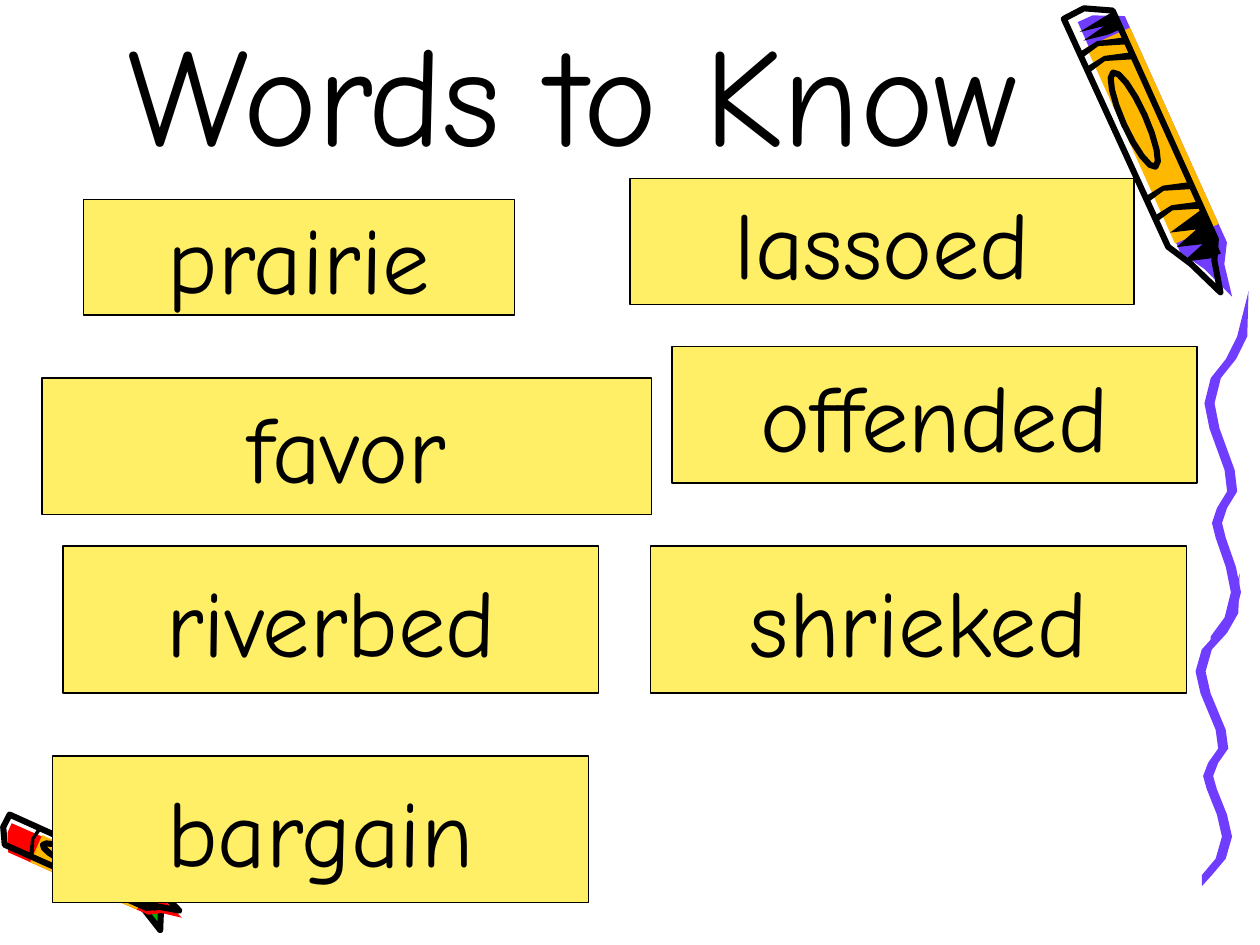
from math import cos, pi, radians, sin

from pptx import Presentation
from pptx.dml.color import RGBColor
from pptx.enum.shapes import MSO_SHAPE as Shape
from pptx.enum.text import MSO_ANCHOR as Anchor, MSO_AUTO_SIZE as Fit, PP_ALIGN as Align
from pptx.util import Cm, Pt

BLACK = RGBColor(0x00, 0x00, 0x00)
YELLOW = RGBColor(0xFF, 0xEF, 0x66)
ORANGE = RGBColor(0xFF, 0xB8, 0x00)
PURPLE = RGBColor(0x70, 0x3D, 0xFF)
RED = RGBColor(0xFF, 0x00, 0x00)
GREEN = RGBColor(0x00, 0xB2, 0x00)

FONT = "Comic Neue"
INK = 3.5  # crayon outline, in points

# A crayon is described as (along, across): along runs from butt to tip.
WAX = [(-0.09, 0.1), (-0.09, 0.23), (0.02, 0.46), (1.99, 0.46),
       (2.14, 0.37), (2.4, 0.32), (2.11, 0.21), (1.91, 0.09)]
EDGE = [(-0.16, 0.01), (-0.17, 0.19), (-0.06, 0.39), (1.93, 0.39),
        (2.08, 0.31), (2.33, 0.25), (2.03, 0.13), (1.83, 0.02)]
BAND = [(0, 0.03), (-0.03, 0.17), (0.05, 0.38),
        (-0.01, 0.38), (-0.07, 0.18), (-0.05, 0.03)]
PAPER_END, PAPER_LOW, PAPER_HIGH = 1.83, 0.08, 0.46
NIB_SHADE = (1.67, 2.05, 3)  # start, stop, teeth
BUTT_SHADE = (-0.05, 0.1, 2)

# Middle of the wavy trail, from its top end down
TRAIL = [(0.35, 0), (0.3, 0.36), (0.21, 0.54), (0.09, 0.69),
         (0.04, 0.89), (0.08, 1.09), (0.2, 1.42), (0.22, 1.59),
         (0.14, 1.72), (0.1, 1.84), (0.13, 1.96), (0.21, 2.19),
         (0.25, 2.39), (0.2, 2.59), (0.09, 2.74), (0.05, 2.84)]
TRAIL_HALF = 0.04  # half the thickness of the trail

# word, left, top, width, height in cm
WORDS = [
    ("prairie", 1.69, 4.02, 8.68, 2.33),
    ("favor", 0.85, 7.62, 12.28, 2.75),
    ("riverbed", 1.27, 11.01, 10.8, 2.96),
    ("lassoed", 12.7, 3.6, 10.16, 2.54),
    ("offended", 13.55, 6.99, 10.58, 2.75),
    ("bargain", 1.06, 15.24, 10.8, 2.96),
    ("shrieked", 13.12, 11.01, 10.8, 2.96),
]


def write(shape, text, size, anchor=Anchor.MIDDLE, wrap=False):
    frame = shape.text_frame
    frame.auto_size = Fit.NONE
    frame.word_wrap = wrap
    frame.vertical_anchor = anchor
    para = frame.paragraphs[0]
    para.alignment = Align.CENTER
    para.line_spacing = 1.0
    para.space_before = Pt(0)
    run = para.add_run()
    run.text = text
    run.font.name = FONT
    run.font.size = Pt(size)
    run.font.color.rgb = BLACK


def paint(shape, fill=None, ink=0):
    """Fill the shape, or leave it open, and give it a black line if ink > 0."""
    shape.shadow.inherit = False
    if fill is None:
        shape.fill.background()
    else:
        shape.fill.solid()
        shape.fill.fore_color.rgb = fill
    if ink:
        shape.line.color.rgb = BLACK
        shape.line.width = Pt(ink)
    else:
        shape.line.fill.background()


def draw(slide, spots, fill=None, ink=0):
    """Draw a closed outline through spots given in cm."""
    spots = [(Cm(x), Cm(y)) for x, y in spots]
    pen = slide.shapes.build_freeform(*spots[0])
    pen.add_line_segments(spots[1:], close=True)
    paint(pen.convert_to_shape(), fill, ink)


def zigzag(start, stop, teeth):
    """Shading that hangs from the barrel's far edge in pointed teeth."""
    step = (stop - start) / teeth
    spots = [(start, 0.38)]
    for i in range(teeth):
        spots += [(start + (i + 0.5) * step, 0.08),
                  (start + (i + 1) * step, 0.28)]
    return spots + [(stop, 0.38)]


def ellipse(along, across, long, short, count=16):
    turns = [2 * pi * i / count for i in range(count)]
    return [(along + long * cos(t), across + short * sin(t)) for t in turns]


def add_crayon(slide, left, top, size, angle, side, wax, cap, bands, shades):
    """Draw a crayon from its butt corner; side 1 or -1 mirrors it.

    size is cm per crayon unit, cap is where the paper wrap starts.
    """
    dx, dy = cos(radians(angle)), sin(radians(angle))

    def part(spots, **look):
        turned = [(left + size * (u * dx + side * v * dy),
                   top + size * (u * dy - side * v * dx)) for u, v in spots]
        draw(slide, turned, **look)

    part(WAX, fill=wax)
    part([(cap, PAPER_LOW), (PAPER_END, PAPER_LOW),
          (PAPER_END, PAPER_HIGH), (cap, PAPER_HIGH)], fill=ORANGE)
    for shade in shades:
        part(zigzag(*shade), fill=BLACK)
    for start in bands:
        part([(start + u, v) for u, v in BAND], fill=BLACK)
    part(ellipse(0.8, 0.19, 0.41, 0.09), ink=INK)
    part(EDGE, ink=INK)


def add_trail(slide, left, top, wide, tall):
    """Widen the middle line into a ribbon with pointed ends."""
    inner = TRAIL[1:-1]
    near = [(x - TRAIL_HALF, y) for x, y in inner]
    far = [(x + TRAIL_HALF, y) for x, y in reversed(inner)]
    ring = [TRAIL[0], *near, TRAIL[-1], *far]
    draw(slide, [(left + wide * x, top + tall * y) for x, y in ring], fill=PURPLE)


def add_title(slide, text):
    title = slide.shapes.title
    title.left, title.top = Cm(0.85), Cm(0)
    title.width, title.height = Cm(21.38), Cm(10.16)
    write(title, text, 80, anchor=Anchor.TOP, wrap=True)


def add_card(slide, word, *box):
    card = slide.shapes.add_shape(Shape.RECTANGLE, *map(Cm, box))
    paint(card, YELLOW, ink=0.75)
    write(card, word, 54)


def main():
    deck = Presentation()
    deck.slide_width, deck.slide_height = Cm(25.4), Cm(19.05)
    slide = deck.slides.add_slide(deck.slide_layouts[5])
    add_title(slide, "Words to Know")

    green_nib = [(2.87, 18.29), (3.25, 18.24), (3.23, 18.75)]
    draw(slide, green_nib, fill=GREEN, ink=INK)
    add_crayon(slide, 0.43, 16.51, size=1.57, angle=24, side=-1, wax=RED,
               cap=0.33, bands=[0.29], shades=[NIB_SHADE])
    add_trail(slide, 24.1, 11.56, wide=2.54, tall=2.22)
    add_trail(slide, 24.28, 5.87, wide=2.54, tall=2.54)
    add_crayon(slide, 21.59, 0.76, size=2.54, angle=65.7, side=1, wax=PURPLE,
               cap=0.12, bands=[0.18, 0.31, 1.44, 1.61],
               shades=[BUTT_SHADE, NIB_SHADE])

    for word in WORDS:
        add_card(slide, *word)
    deck.save("out.pptx")


if __name__ == "__main__":
    main()
